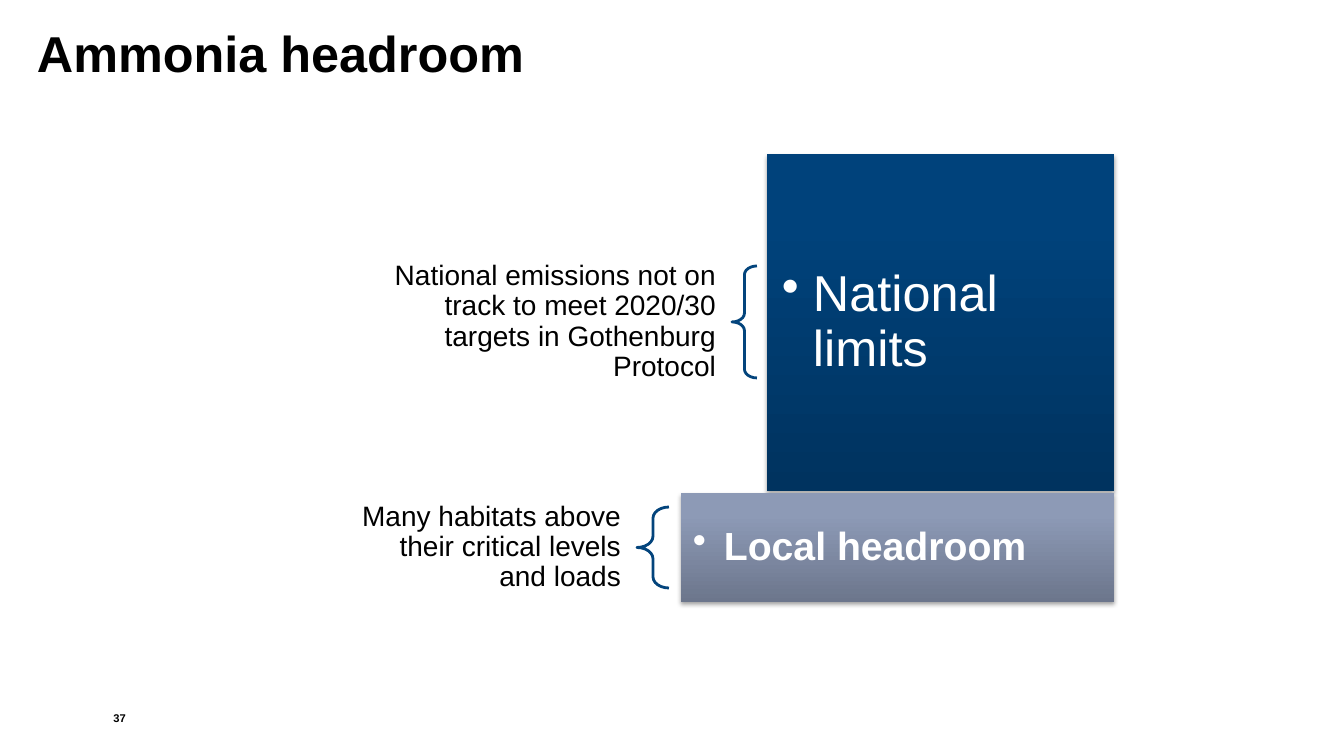
from pptx import Presentation
from pptx.dml.color import RGBColor
from pptx.enum.shapes import MSO_SHAPE
from pptx.enum.text import MSO_ANCHOR, MSO_AUTO_SIZE, PP_ALIGN
from pptx.oxml import parse_xml
from pptx.oxml.ns import nsdecls
from pptx.util import Emu, Pt

RECTANGLE, LEFT_BRACE = MSO_SHAPE.RECTANGLE, MSO_SHAPE.LEFT_BRACE
TOP, MIDDLE, BOTTOM = MSO_ANCHOR.TOP, MSO_ANCHOR.MIDDLE, MSO_ANCHOR.BOTTOM
LEFT, RIGHT = PP_ALIGN.LEFT, PP_ALIGN.RIGHT

BLACK = RGBColor(0x00, 0x00, 0x00)
WHITE = RGBColor(0xFF, 0xFF, 0xFF)
BRACE_BLUE = RGBColor(0x03, 0x44, 0x7C)
NAVY_DARK, NAVY = RGBColor(0x00, 0x33, 0x5F), RGBColor(0x00, 0x42, 0x7B)
SLATE_DARK, SLATE = RGBColor(0x6C, 0x76, 0x8C), RGBColor(0x8D, 0x9A, 0xB6)

TITLE = "Ammonia headroom"
PAGE_NUMBER = "37"
LEVELS = [
    dict(name="National limits", size=36, bold=False, width=347, height=337,
         inset=15, colors=(NAVY_DARK, NAVY), gap=10, brace=(25, 112),
         note="National emissions not on track to meet 2020/30 targets "
              "in Gothenburg Protocol"),
    dict(name="Local headroom", size=28, bold=True, width=433, height=109,
         inset=12, colors=(SLATE_DARK, SLATE), gap=12, brace=(32, 81),
         note="Many habitats above their critical levels and loads"),
]
STACK_TOP, STACK_RIGHT, STACK_GAP = 154, 1114, 2
NOTE_LEFT = 337
BULLET_INDENT = 31
PX = 9071  # EMU per pixel at 100.8 pixels to the inch


def px(*lengths):
    return [Emu(length * PX) for length in lengths]


def write(shape, text, size, color, bold=False, align=LEFT, anchor=MIDDLE,
          insets=(0, 0), spacing=0.9, bullet=False):
    frame = shape.text_frame
    frame.word_wrap = True
    frame.auto_size = MSO_AUTO_SIZE.NONE
    frame.vertical_anchor = anchor
    across, down = px(*insets)
    frame.margin_left = frame.margin_right = across
    frame.margin_top = frame.margin_bottom = down
    para = frame.paragraphs[0]
    para.alignment = align
    para.line_spacing = spacing
    if bullet:
        indent = BULLET_INDENT * PX
        props = para._p.get_or_add_pPr()
        props.set("marL", str(indent))
        props.set("indent", str(-indent))
        props.append(parse_xml(f'<a:buChar {nsdecls("a")} char="•"/>'))
    span = para.add_run()
    span.text = text
    span.font.name = "Arial"
    span.font.size = Pt(size)
    span.font.bold = bold
    span.font.color.rgb = color


def shade(shape, dark, light):
    """Fill from dark at the bottom to light at 80% height, with a soft shadow."""
    shape.line.fill.background()
    stops = "".join(
        f'<a:gs pos="{position}"><a:srgbClr val="{color}"/></a:gs>'
        for position, color in ((0, dark), (80000, light), (100000, light)))
    properties = shape.element.spPr
    properties.insert(2, parse_xml(
        f'<a:gradFill {nsdecls("a")} rotWithShape="1"><a:gsLst>{stops}</a:gsLst>'
        '<a:lin ang="16200000" scaled="0"/></a:gradFill>'))
    shape.shadow.inherit = False
    properties[-1].append(parse_xml(
        f'<a:outerShdw {nsdecls("a")} blurRad="{Pt(3.1)}" dist="{Pt(1.8)}" '
        'dir="5400000" rotWithShape="0"><a:srgbClr val="000000">'
        '<a:alpha val="35000"/></a:srgbClr></a:outerShdw>'))


def add_level(page, level, top):
    left = STACK_RIGHT - level["width"]
    brace_width, brace_height = level["brace"]
    brace_left = left - level["gap"] - brace_width
    brace_top = top + (level["height"] - brace_height) // 2

    note = page.shapes.add_textbox(
        *px(NOTE_LEFT, brace_top, brace_left - NOTE_LEFT, brace_height))
    write(note, level["note"], 20, BLACK, align=RIGHT, insets=(16, 6))

    brace = page.shapes.add_shape(
        LEFT_BRACE, *px(brace_left, brace_top, brace_width, brace_height))
    brace.adjustments[0] = 0.35
    brace.fill.background()
    brace.line.color.rgb = BRACE_BLUE
    brace.line.width = Pt(2)
    brace.shadow.inherit = False

    block = page.shapes.add_shape(
        RECTANGLE, *px(left, top, level["width"], level["height"]))
    shade(block, *level["colors"])
    write(block, level["name"], level["size"], WHITE, level["bold"],
          insets=(level["inset"], level["inset"]), bullet=True)


def main():
    deck = Presentation()
    deck.slide_width, deck.slide_height = px(1344, 756)
    page = deck.slides.add_slide(deck.slide_layouts[5])

    title = page.shapes.title
    title.left, title.top, title.width, title.height = px(37, 29, 1207, 55)
    write(title, TITLE, 36, BLACK, bold=True, anchor=TOP)

    number = page.shapes.add_textbox(*px(69, 683, 57, 42))
    write(number, PAGE_NUMBER, 8, BLACK, bold=True, align=RIGHT,
          anchor=BOTTOM, spacing=0.95)

    top = STACK_TOP
    for level in LEVELS:
        add_level(page, level, top)
        top += level["height"] + STACK_GAP

    deck.save("out.pptx")


if __name__ == "__main__":
    main()
